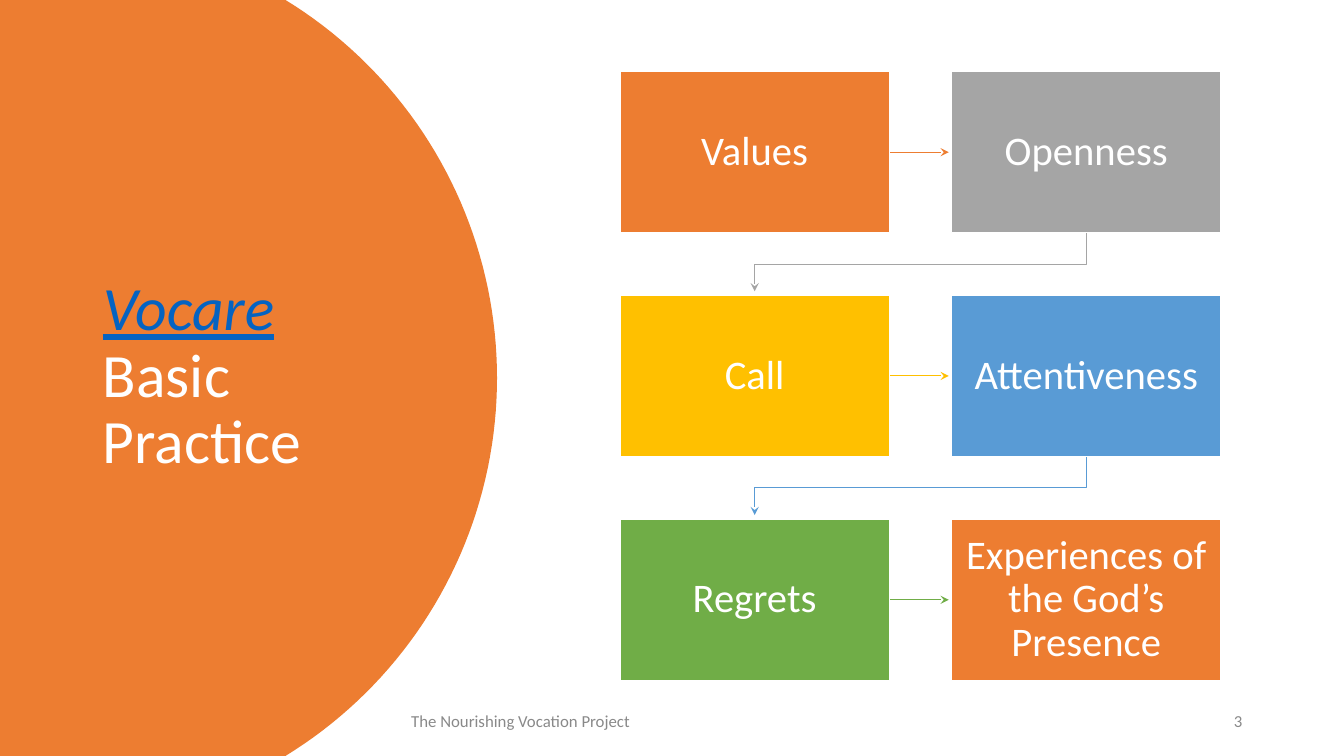
from dataclasses import dataclass
from math import asin, cos, sin

from lxml.etree import SubElement
from pptx import Presentation
from pptx.dml.color import RGBColor
from pptx.enum.shapes import MSO_CONNECTOR, MSO_SHAPE
from pptx.enum.text import MSO_ANCHOR, MSO_AUTO_SIZE, PP_ALIGN
from pptx.oxml.ns import qn
from pptx.util import Inches, Pt


@dataclass(frozen=True)
class Theme:
    font: str = "Calibri"
    white: str = "FFFFFF"
    orange: str = "ED7D31"
    grey: str = "A5A5A5"
    gold: str = "FFC000"
    blue: str = "599BD5"
    green: str = "70AD47"
    link: str = "0563C1"
    footer: str = "898989"
    title_size: float = 44
    step_size: float = 29
    footer_size: float = 12


@dataclass(frozen=True)
class Step:
    label: str
    color: str


@dataclass(frozen=True)
class Footer:
    text: str
    left: float
    width: float
    alignment: PP_ALIGN


THEME = Theme()
SLIDE_WIDTH, SLIDE_HEIGHT = 13.33, 7.5
ARC_CENTER, ARC_RADIUS, ARC_SEGMENTS = 0.53, 4.4, 80
GRID_LEFT, GRID_TOP = 6.15, 0.71
STEP_WIDTH, STEP_HEIGHT = 2.67, 1.6
COLUMN_PITCH, ROW_PITCH, COLUMNS = 3.29, 2.22, 2

STEPS = [
    Step("Values", THEME.orange),
    Step("Openness", THEME.grey),
    Step("Call", THEME.gold),
    Step("Attentiveness", THEME.blue),
    Step("Regrets", THEME.green),
    Step("Experiences of the God’s Presence", THEME.orange),
]
FOOTERS = [
    Footer("The Nourishing Vocation Project", 3.98, 4.93, PP_ALIGN.LEFT),
    Footer("3", 9.42, 3, PP_ALIGN.RIGHT),
]


def rgb(color: str) -> RGBColor:
    return RGBColor.from_string(color)


def format_font(font, size: float, color: str) -> None:
    font.name = THEME.font
    font.size = Pt(size)
    font.color.rgb = rgb(color)


def add_outline(slide, points: list[tuple[float, float]], close: bool):
    corners = [(Inches(x), Inches(y)) for x, y in points]
    builder = slide.shapes.build_freeform(*corners[0], scale=1.0)
    builder.add_line_segments(corners[1:], close=close)
    shape = builder.convert_to_shape()
    shape.shadow.inherit = False
    return shape


def add_title_panel(slide) -> None:
    middle = SLIDE_HEIGHT / 2
    half_angle = asin(middle / ARC_RADIUS)
    angles = [half_angle * (2 * i / ARC_SEGMENTS - 1) for i in range(ARC_SEGMENTS + 1)]
    arc = [(ARC_CENTER + ARC_RADIUS * cos(a), middle + ARC_RADIUS * sin(a)) for a in angles]
    panel = add_outline(slide, [(0, 0), *arc, (0, SLIDE_HEIGHT)], close=True)
    panel.fill.solid()
    panel.fill.fore_color.rgb = rgb(THEME.orange)
    panel.line.fill.background()


def format_title(slide) -> None:
    title = slide.shapes.title
    title.left, title.top = Inches(0.92), Inches(0.7)
    title.width, title.height = Inches(3.23), Inches(6.09)
    frame = title.text_frame
    frame.auto_size = MSO_AUTO_SIZE.NONE
    frame.vertical_anchor = MSO_ANCHOR.MIDDLE
    paragraph = frame.paragraphs[0]
    paragraph.alignment = PP_ALIGN.LEFT
    paragraph.line_spacing = 0.9
    name, rest = paragraph.add_run(), paragraph.add_run()
    name.text, rest.text = "Vocare", " Basic Practice"
    format_font(name.font, THEME.title_size, THEME.link)
    name.font.italic = name.font.underline = True
    format_font(rest.font, THEME.title_size, THEME.white)
    slide.shapes._spTree.append(title._element)


def add_footer(slide, footer: Footer) -> None:
    box = slide.shapes.add_textbox(
        Inches(footer.left), Inches(6.95), Inches(footer.width), Inches(0.4)
    )
    frame = box.text_frame
    frame.word_wrap = True
    frame.vertical_anchor = MSO_ANCHOR.MIDDLE
    paragraph = frame.paragraphs[0]
    paragraph.text = footer.text
    paragraph.alignment = footer.alignment
    format_font(paragraph.font, THEME.footer_size, THEME.footer)


def step_position(index: int) -> tuple[float, float]:
    row, column = divmod(index, COLUMNS)
    return GRID_LEFT + column * COLUMN_PITCH, GRID_TOP + row * ROW_PITCH


def add_step(slide, step: Step, left: float, top: float) -> None:
    shape = slide.shapes.add_shape(
        MSO_SHAPE.RECTANGLE, Inches(left), Inches(top), Inches(STEP_WIDTH), Inches(STEP_HEIGHT)
    )
    shape.shadow.inherit = False
    shape.fill.solid()
    shape.fill.fore_color.rgb = rgb(step.color)
    shape.line.color.rgb = rgb(THEME.white)
    shape.line.width = Pt(1)
    frame = shape.text_frame
    frame.word_wrap = True
    frame.vertical_anchor = MSO_ANCHOR.MIDDLE
    frame.margin_left = frame.margin_right = Inches(0.13)
    frame.margin_top = frame.margin_bottom = Inches(0.14)
    paragraph = frame.paragraphs[0]
    paragraph.text = step.label
    paragraph.alignment = PP_ALIGN.CENTER
    paragraph.line_spacing = 0.9
    format_font(paragraph.font, THEME.step_size, THEME.white)


def format_arrow(line, color: str) -> None:
    line.color.rgb = rgb(color)
    line.width = Pt(0.75)
    SubElement(line._get_or_add_ln(), qn("a:tailEnd"), type="stealth")


def add_straight_arrow(slide, color: str, left: float, top: float) -> None:
    start = left + STEP_WIDTH + 0.01
    middle = Inches(top + STEP_HEIGHT / 2)
    arrow = slide.shapes.add_connector(
        MSO_CONNECTOR.STRAIGHT, Inches(start), middle, Inches(start + 0.58), middle
    )
    format_arrow(arrow.line, color)
    SubElement(arrow._element.spPr, qn("a:effectLst"))


def add_return_arrow(slide, color: str, left: float, top: float) -> None:
    start_x = left + STEP_WIDTH / 2
    end_x = start_x - COLUMN_PITCH
    start_y = top + STEP_HEIGHT
    bend_y = start_y + (ROW_PITCH - STEP_HEIGHT) / 2
    points = [(start_x, start_y), (start_x, bend_y), (end_x, bend_y), (end_x, start_y + 0.58)]
    arrow = add_outline(slide, points, close=False)
    arrow.fill.background()
    format_arrow(arrow.line, color)


def main() -> None:
    presentation = Presentation()
    presentation.slide_width = Inches(SLIDE_WIDTH)
    presentation.slide_height = Inches(SLIDE_HEIGHT)
    slide = presentation.slides.add_slide(presentation.slide_layouts[5])
    add_title_panel(slide)
    format_title(slide)
    for footer in FOOTERS:
        add_footer(slide, footer)
    for index, step in enumerate(STEPS):
        left, top = step_position(index)
        if index < len(STEPS) - 1:
            ends_row = index % COLUMNS == COLUMNS - 1
            add_arrow = add_return_arrow if ends_row else add_straight_arrow
            add_arrow(slide, step.color, left, top)
        add_step(slide, step, left, top)
    presentation.save("out.pptx")


if __name__ == "__main__":
    main()
